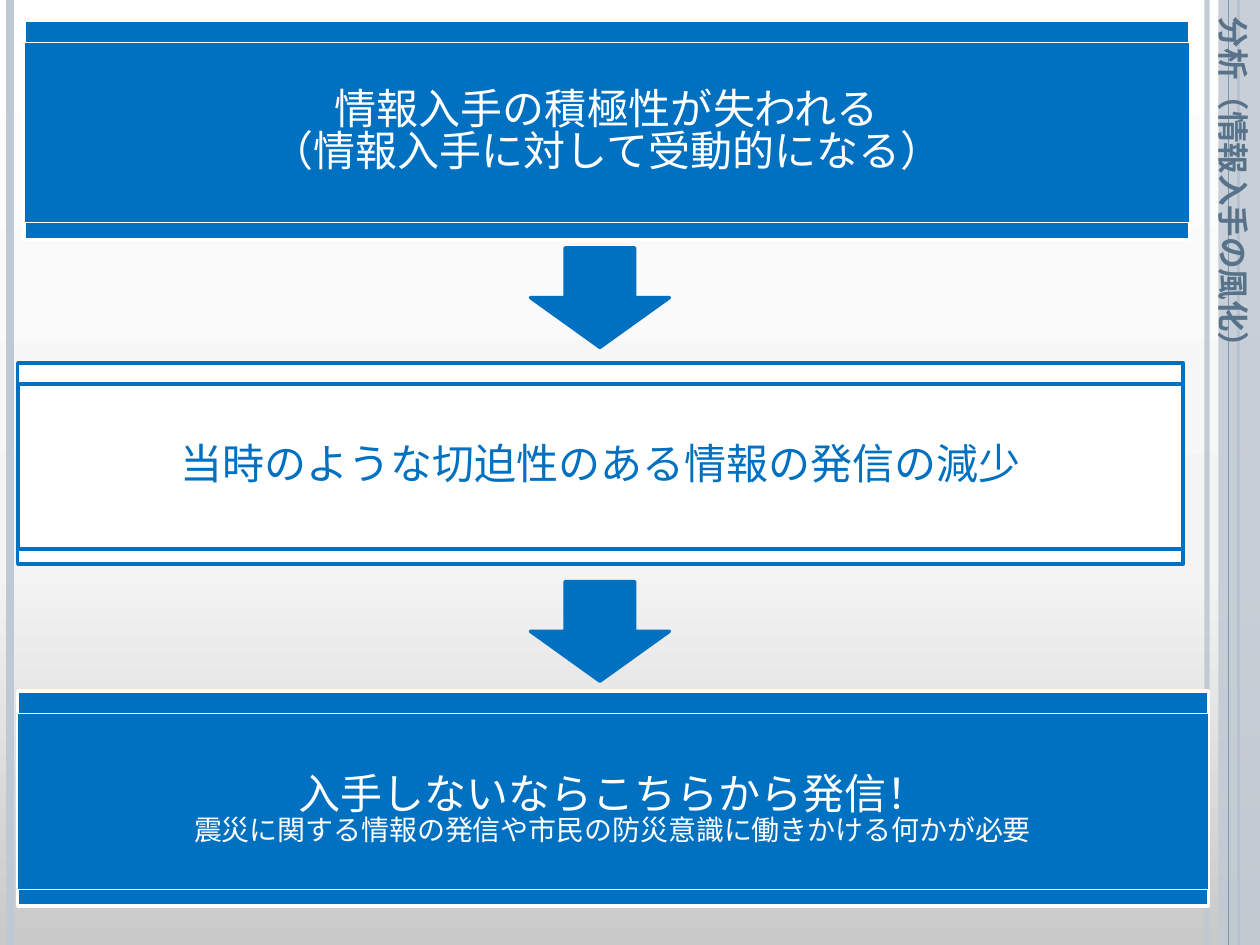
from copy import deepcopy

from lxml.etree import SubElement
from pptx import Presentation
from pptx.dml.color import RGBColor
from pptx.enum.shapes import MSO_CONNECTOR, MSO_SHAPE
from pptx.enum.text import MSO_ANCHOR, PP_ALIGN
from pptx.oxml.ns import qn
from pptx.util import Pt

WIDTH, HEIGHT = 720, 540
FONT = "Noto Sans CJK JP"
BLUE, WHITE, PALE, STEEL, SLATE = "0070C0", "FFFFFF", "C0C9D3", "7E97AD", "577289"

TITLE = "分析（情報入手の風化）"
BACKGROUND = [(0, "C9C9C9"), (0.4, "F4F4F4"), (1, "FFFFFF")]
# x, width, colour, opacity in percent
RULES_BEHIND_BAND = [(689.8, 3, PALE, 93), (5.8, 4.5, PALE, 100), (707.8, 1.5, STEEL, 100)]
RULES_ON_BAND = [(702, 0.75, STEEL, 100)]
# outer frame, (top, height) of inner panel, fill, text colour, line colour,
# inner line width, extra space above the text, lines of text with sizes
STEPS = [
    ((13.8, 11.8, 666, 125.2), (24.3, 102.8), BLUE, WHITE, WHITE, 0.75, 0,
     [("情報入手の積極性が失われる", 24), ("（情報入手に対して受動的になる）", 24)]),
    ((10.1, 207.5, 666, 114.8), (219.4, 94.3), WHITE, BLUE, BLUE, 2.25, 0,
     [("当時のような切迫性のある情報の発信の減少", 24)]),
    ((10.1, 394.8, 680.4, 123), (407.6, 100.8), BLUE, WHITE, WHITE, 0.75, 11,
     [("入手しないならこちらから発信！", 24),
      ("震災に関する情報の発信や市民の防災意識に働きかける何かが必要", 16)]),
]
ARROW_TOPS = [141.6, 332.3]


def rgb(color):
    return RGBColor.from_string(color)


def set_opacity(properties, percent):
    if percent < 100:
        color = next(properties.iter(qn("a:srgbClr")))
        SubElement(color, qn("a:alpha"), val=str(percent * 1000))


def add_block(slide, preset, box, fill, line=None, line_width=2):
    block = slide.shapes.add_shape(preset, *map(Pt, box))
    block.shadow.inherit = False
    block.fill.solid()
    block.fill.fore_color.rgb = rgb(fill)
    if line:
        block.line.color.rgb = rgb(line)
        block.line.width = Pt(line_width)
    else:
        block.line.fill.background()
    return block


def add_rule(slide, x, width, color, opacity):
    rule = slide.shapes.add_connector(MSO_CONNECTOR.STRAIGHT, Pt(x), 0, Pt(x), Pt(HEIGHT))
    rule.line.color.rgb = rgb(color)
    rule.line.width = Pt(width)
    properties = rule._element.spPr
    set_opacity(properties, opacity)
    SubElement(properties, qn("a:effectLst"))


def write(frame, lines, color, bold=False, align=PP_ALIGN.CENTER, spacing=None,
          anchor=MSO_ANCHOR.MIDDLE, insets=(8.6, 8.6, 8.6, 8.6), wrap=True):
    """Fill a text frame; insets run left, top, right, bottom."""
    frame.word_wrap = wrap
    frame.vertical_anchor = anchor
    (frame.margin_left, frame.margin_top,
     frame.margin_right, frame.margin_bottom) = map(Pt, insets)
    for index, (text, size) in enumerate(lines):
        paragraph = frame.add_paragraph() if index else frame.paragraphs[0]
        paragraph.alignment = align
        paragraph.line_spacing = spacing
        run = paragraph.add_run()
        run.text = text
        run.font.size = Pt(size)
        run.font.bold = bold
        run.font.name = FONT
        run.font.color.rgb = rgb(color)
        latin = run._r.rPr.find(qn("a:latin"))
        east_asian = deepcopy(latin)
        east_asian.tag = qn("a:ea")
        latin.addnext(east_asian)


def paint_background(slide):
    fill = slide.background.fill
    fill.gradient()
    fill.gradient_angle = 90
    last = fill.gradient_stops[1]._gs
    last.addnext(deepcopy(last))
    for stop, (position, color) in zip(fill.gradient_stops, BACKGROUND):
        stop.position = position
        stop.color.rgb = rgb(color)


def main():
    deck = Presentation()
    deck.slide_width, deck.slide_height = Pt(WIDTH), Pt(HEIGHT)
    slide = deck.slides.add_slide(deck.slide_layouts[6])
    paint_background(slide)

    for rule in RULES_BEHIND_BAND:
        add_rule(slide, *rule)
    band = add_block(slide, MSO_SHAPE.RECTANGLE, (696.2, 0, WIDTH - 696.2, HEIGHT), PALE)
    set_opacity(band._element.spPr, 87)
    for rule in RULES_ON_BAND:
        add_rule(slide, *rule)

    title = slide.shapes.add_textbox(Pt(547.9), Pt(141.1), Pt(314), Pt(29))
    title.rotation = 90
    write(title.text_frame, [(TITLE, 18)], SLATE, bold=True, align=PP_ALIGN.LEFT,
          anchor=MSO_ANCHOR.TOP, insets=(11, 3.6, 7.2, 3.6))

    for frame, (top, height), fill, ink, line, line_width, drop, lines in STEPS:
        left, _, width, _ = frame
        add_block(slide, MSO_SHAPE.RECTANGLE, frame, fill, line)
        panel = add_block(slide, MSO_SHAPE.RECTANGLE, (left, top, width, height),
                          fill, line, line_width)
        write(panel.text_frame, lines, ink, spacing=0.84,
              insets=(8.6, 8.6 + drop, 8.6, 8.6))

    for top in ARROW_TOPS:
        add_block(slide, MSO_SHAPE.DOWN_ARROW, (303.1, top, 79.4, 56.9), BLUE, BLUE)

    deck.save("out.pptx")


if __name__ == "__main__":
    main()
